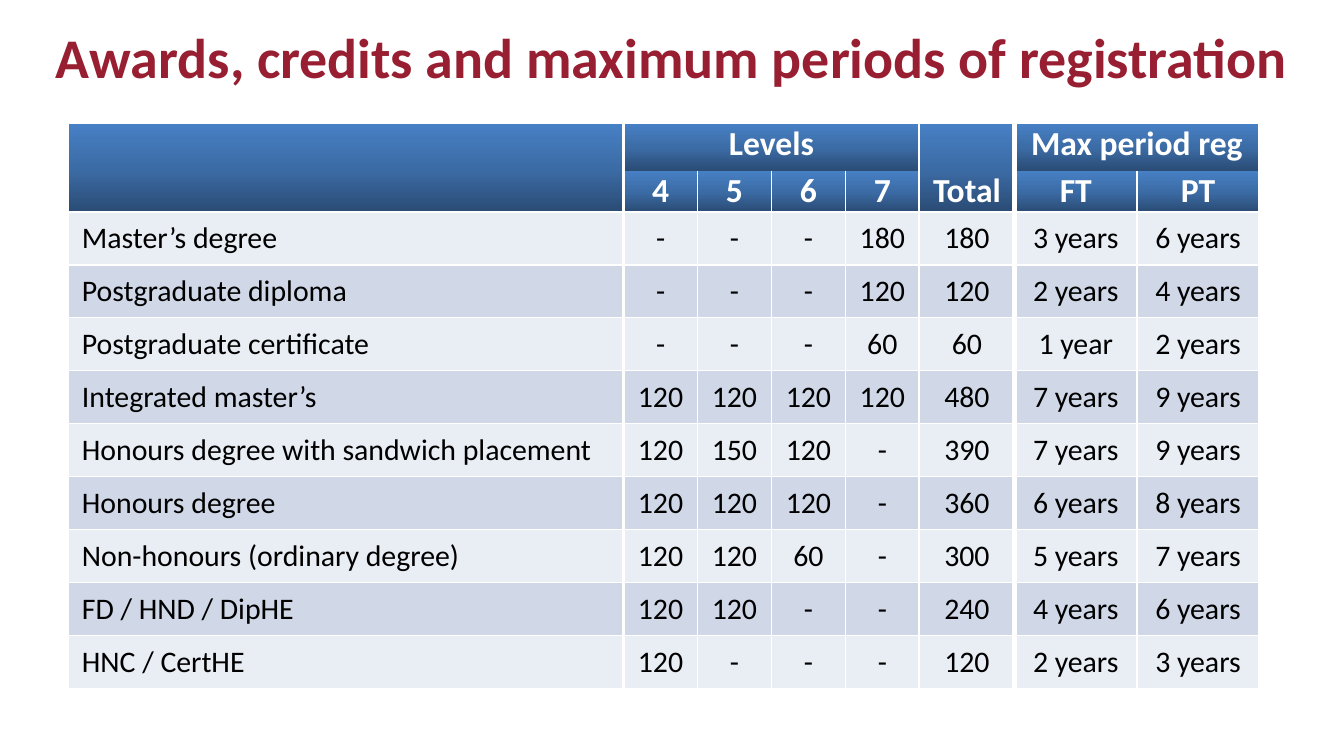
"""Build a slide with a table of awards, credits and registration periods."""
from lxml import etree
from pptx import Presentation
from pptx.dml.color import RGBColor
from pptx.enum.text import MSO_ANCHOR, PP_ALIGN
from pptx.oxml.ns import qn
from pptx.util import Inches, Pt

LEFT, CENTER = PP_ALIGN.LEFT, PP_ALIGN.CENTER
TOP, MIDDLE, BOTTOM = MSO_ANCHOR.TOP, MSO_ANCHOR.MIDDLE, MSO_ANCHOR.BOTTOM

TITLE = "Awards, credits and maximum periods of registration"
HEADINGS = [
    ("", "Levels", "", "", "", "Total", "Max period reg", ""),
    ("", "4", "5", "6", "7", "", "FT", "PT"),
]
AWARDS = [
    ("Master’s degree", "-", "-", "-", "180", "180", "3 years", "6 years"),
    ("Postgraduate diploma", "-", "-", "-", "120", "120", "2 years", "4 years"),
    ("Postgraduate certificate", "-", "-", "-", "60", "60", "1 year", "2 years"),
    ("Integrated master’s", "120", "120", "120", "120", "480", "7 years", "9 years"),
    ("Honours degree with sandwich placement", "120", "150", "120", "-", "390", "7 years", "9 years"),
    ("Honours degree", "120", "120", "120", "-", "360", "6 years", "8 years"),
    ("Non-honours (ordinary degree)", "120", "120", "60", "-", "300", "5 years", "7 years"),
    ("FD / HND / DipHE", "120", "120", "-", "-", "240", "4 years", "6 years"),
    ("HNC / CertHE", "120", "-", "-", "-", "120", "2 years", "3 years"),
]
MERGES = [((0, 0), (1, 0)), ((0, 1), (0, 4)), ((0, 5), (1, 5)), ((0, 6), (0, 7))]
SLIDE_WIDTH = 10
SLIDE_HEIGHT = SLIDE_WIDTH * 9 / 16
COLUMN_WIDTHS = [4.13] + [0.55] * 4 + [0.71, 0.91, 0.91]
ROW_HEIGHTS = [0.35, 0.28] + [3.55 / len(AWARDS)] * len(AWARDS)
COLUMN_RULES = [1, 1.5, 1, 1, 1, 1.5, 3, 1, 1]
ROW_RULES = [1, 0, 1.5] + [1] * len(AWARDS)
HEADING_GRADIENT = [(0, "2A4C75"), (50, "3C6CA6"), (100, "4780C5")]
BANDS = ["E9EDF4", "D0D8E8"]
WHITE, BLACK, CRIMSON = "FFFFFF", "000000", "981E32"


def rgb(value):
    return RGBColor.from_string(value)


def format_text(frame, size, color, bold, align):
    for paragraph in frame.paragraphs:
        paragraph.alignment = align
        for run in paragraph.runs:
            run.font.name, run.font.size, run.font.bold = "Calibri", Pt(size), bold
            run.font.color.rgb = rgb(color)


def add_element(parent, tag, **attributes):
    element = etree.SubElement(parent, qn(tag))
    for key, value in attributes.items():
        element.set(key, str(value))
    return element


def add_rules(cell, row, column):
    properties = cell._tc.get_or_add_tcPr()
    rules = {
        "a:lnL": COLUMN_RULES[column],
        "a:lnR": COLUMN_RULES[column + cell.span_width],
        "a:lnT": ROW_RULES[row],
        "a:lnB": ROW_RULES[row + cell.span_height],
    }
    for tag, width in rules.items():
        line = add_element(properties, tag, w=int(Pt(width)))
        if width:
            add_element(add_element(line, "a:solidFill"), "a:srgbClr", val=WHITE)
        else:
            add_element(line, "a:noFill")


def fill_heading(cell):
    gradient = add_element(cell._tc.get_or_add_tcPr(), "a:gradFill", rotWithShape=1)
    stops = add_element(gradient, "a:gsLst")
    for position, color in HEADING_GRADIENT:
        add_element(add_element(stops, "a:gs", pos=position * 1000), "a:srgbClr", val=color)
    add_element(gradient, "a:lin", ang=270 * 60000, scaled=0)


def add_awards_table(slide):
    rows = HEADINGS + AWARDS
    table = slide.shapes.add_table(
        len(rows), len(COLUMN_WIDTHS), Inches(0.51), Inches(0.92),
        Inches(sum(COLUMN_WIDTHS)), Inches(sum(ROW_HEIGHTS))).table
    for column, width in zip(table.columns, COLUMN_WIDTHS):
        column.width = Inches(width)
    for row, height in zip(table.rows, ROW_HEIGHTS):
        row.height = Inches(height)
    for first, last in MERGES:
        table.cell(*first).merge(table.cell(*last))

    for r, values in enumerate(rows):
        for c, value in enumerate(values):
            cell = table.cell(r, c)
            if cell.is_spanned:
                continue
            cell.text_frame.text = value
            cell.margin_left = cell.margin_right = Inches(0.1)
            cell.margin_top = cell.margin_bottom = 0
            add_rules(cell, r, c)
            if r < len(HEADINGS):
                cell.vertical_anchor = BOTTOM if value == "Total" else TOP
                fill_heading(cell)
                format_text(cell.text_frame, 18, WHITE, True, CENTER)
            else:
                cell.vertical_anchor = MIDDLE
                cell.fill.solid()
                cell.fill.fore_color.rgb = rgb(BANDS[(r - len(HEADINGS)) % 2])
                format_text(cell.text_frame, 16, BLACK, False, CENTER if c else LEFT)


def add_title(slide):
    frame = slide.shapes.add_textbox(
        Inches(0.12), Inches(0.02), Inches(9.76), Inches(0.79)).text_frame
    frame.word_wrap = True
    frame.vertical_anchor = MIDDLE
    frame.text = TITLE
    format_text(frame, 30, CRIMSON, True, CENTER)


def main():
    presentation = Presentation()
    presentation.slide_width = Inches(SLIDE_WIDTH)
    presentation.slide_height = Inches(SLIDE_HEIGHT)
    slide = presentation.slides.add_slide(presentation.slide_layouts[6])
    add_awards_table(slide)
    add_title(slide)
    presentation.save("out.pptx")


if __name__ == "__main__":
    main()
